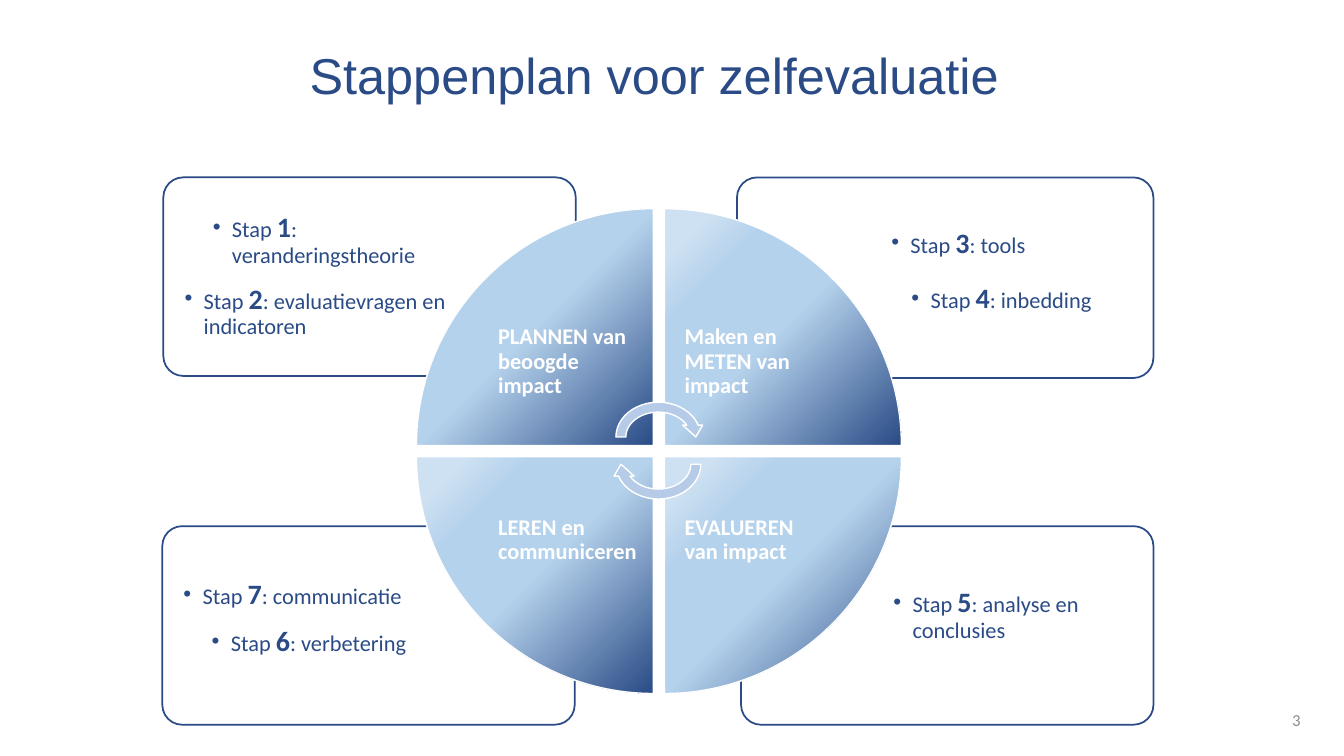
from lxml import etree
from pptx import Presentation
from pptx.dml.color import RGBColor
from pptx.enum.shapes import MSO_SHAPE
from pptx.enum.text import MSO_ANCHOR, MSO_AUTO_SIZE, PP_ALIGN
from pptx.oxml import parse_xml
from pptx.oxml.ns import nsdecls, qn
from pptx.util import Emu, Pt

ROUNDED, WEDGE, CYCLE_ARROW = (
    MSO_SHAPE.ROUNDED_RECTANGLE, MSO_SHAPE.PIE_WEDGE, MSO_SHAPE.CIRCULAR_ARROW)
TOP, MIDDLE = MSO_ANCHOR.TOP, MSO_ANCHOR.MIDDLE
LEFT, CENTER, RIGHT = PP_ALIGN.LEFT, PP_ALIGN.CENTER, PP_ALIGN.RIGHT
NO_FIT = MSO_AUTO_SIZE.NONE

EMU_PER_PX = 9144  # 100 px to the inch
COMPARISON_LAYOUT = 4  # a title and four text placeholders

COLORS = {
    "navy": "2A4B86",
    "sky": "B5D2EC",
    "pale": "CEE1F2",
    "arrow": "B5CBE7",
    "white": "FFFFFF",
    "gray": "8C8C8C",
}
WEDGE_STOPS = [(0, "navy"), (50, "sky"), (75, "sky"), (90, "pale")]

# Wheel: four quarters of equal size around a narrow cross
WHEEL_LEFT, WHEEL_TOP = 413, 207
QUARTER, PITCH, LABEL = 235, 246, 166
LABEL_INSETS = [(12, 12, 12, 12), (20, 12, 0, 12)]  # left, right column

# Column, row, rotation and label, clockwise from top left
QUARTERS = [
    (0, 0, 0, "PLANNEN van beoogde impact"),
    (1, 0, 90, "Maken en METEN van impact"),
    (1, 1, 180, "EVALUEREN van impact"),
    (0, 1, 270, "LEREN en communiceren"),
]

# Frame, opacity, list area, insets, space after a step, steps (indent, number, text)
STEP_BOXES = [
    ((735, 522, 409, 197), 86, (862, 576, 278, 139), (4, 8, 4, 12), 0,
     [(39, "5", "analyse en conclusies")]),
    ((161, 522, 409, 197), 90, (166, 576, 278, 139), (4, 0, 4, 12), 12,
     [(31, "7", "communicatie"), (59, "6", "verbetering")]),
    ((731, 176, 413, 199), 90, (860, 180, 280, 140), (4, 47, 4, 12), 18,
     [(39, "3", "tools"), (59, "4", "inbedding")]),
    ((162, 176, 409, 197), 91, (167, 181, 278, 139), (4, 31, 0, 12), 12,
     [(59, "1", "veranderingstheorie"),
      (31, "2", "evaluatievragen en indicatoren")]),
]


def px(length):
    return Emu(length * EMU_PER_PX)


def rgb(name):
    return RGBColor.from_string(COLORS[name])


def place(shape, area):
    shape.left, shape.top, shape.width, shape.height = map(px, area)


def set_frame(shape, insets, anchor):
    frame = shape.text_frame
    frame.word_wrap = True
    frame.auto_size = NO_FIT
    frame.vertical_anchor = anchor
    (frame.margin_left, frame.margin_top,
     frame.margin_right, frame.margin_bottom) = map(px, insets)
    return frame


def add_span(para, text, size, color, bold=False, font="Calibri"):
    span = para.add_run()
    span.text = text
    span.font.name = font
    span.font.size = Pt(size)
    span.font.bold = bold
    span.font.color.rgb = rgb(color)


def add_shape(page, kind, area, line, width, rotation=0):
    shape = page.shapes.add_shape(kind, *map(px, area))
    shape.shadow.inherit = False
    shape.rotation = rotation
    shape.line.color.rgb = rgb(line)
    shape.line.width = Pt(width)
    return shape


def fill_solid(shape, color, opacity=100):
    shape.fill.solid()
    shape.fill.fore_color.rgb = rgb(color)
    if opacity < 100:
        tone = shape.element.spPr.find(qn("a:solidFill"))[0]
        etree.SubElement(tone, qn("a:alpha")).set("val", str(opacity * 1000))


def fill_radial(shape):
    stops = "".join(
        f'<a:gs pos="{position * 1000}"><a:srgbClr val="{COLORS[name]}"/></a:gs>'
        for position, name in WEDGE_STOPS)
    gradient = parse_xml(
        f'<a:gradFill {nsdecls("a")} rotWithShape="0"><a:gsLst>{stops}</a:gsLst>'
        '<a:path path="circle"><a:fillToRect l="100000" t="100000"/></a:path>'
        '</a:gradFill>')
    shape.element.spPr.find(qn("a:prstGeom")).addnext(gradient)


def add_text(page, text, area, insets, size, color, bold=False, align=LEFT):
    box = page.shapes.add_textbox(*map(px, area))
    para = set_frame(box, insets, MIDDLE).paragraphs[0]
    para.alignment = align
    para.line_spacing = 0.9
    add_span(para, text, size, color, bold)


def set_bullet(para, indent):
    properties = para._p.get_or_add_pPr()
    properties.set("marL", str(px(indent)))
    properties.set("indent", str(px(-19)))
    etree.SubElement(properties, qn("a:buFont")).set("typeface", "Arial")
    etree.SubElement(properties, qn("a:buChar")).set("char", "•")


def add_step_box(page, body, frame_area, opacity, list_area, insets, gap, steps):
    box = add_shape(page, ROUNDED, frame_area, "navy", 1.25)
    box.adjustments[0] = 0.1
    fill_solid(box, "white", opacity)

    # The list lies directly above its frame
    box.element.addnext(body.element)
    place(body, list_area)
    frame = set_frame(body, insets, TOP)
    for index, (indent, number, text) in enumerate(steps):
        para = frame.add_paragraph() if index else frame.paragraphs[0]
        para.alignment = LEFT
        para.line_spacing = 0.9
        para.space_before = Pt(0)
        para.space_after = Pt(gap if index < len(steps) - 1 else 0)
        set_bullet(para, indent)
        add_span(para, "Stap ", 16, "navy")
        add_span(para, number, 20, "navy", bold=True)
        add_span(para, ": " + text, 16, "navy")


def add_quarter(page, column, row, rotation, label):
    left, top = WHEEL_LEFT + column * PITCH, WHEEL_TOP + row * PITCH
    wedge = add_shape(page, WEDGE, (left, top, QUARTER, QUARTER), "white", 1, rotation)
    fill_radial(wedge)

    # The label sits in the corner nearest the centre
    inward = QUARTER - LABEL
    area = (left + (1 - column) * inward, top + (1 - row) * inward, LABEL, LABEL)
    add_text(page, label, area, LABEL_INSETS[column], 16, "white", bold=True)


def main():
    deck = Presentation()
    deck.slide_width, deck.slide_height = px(1333), px(750)
    page = deck.slides.add_slide(deck.slide_layouts[COMPARISON_LAYOUT])
    title, *bodies = page.placeholders

    # Title and page number
    place(title, (98, 39, 1102, 71))
    heading = set_frame(title, (10, 5, 10, 5), TOP).paragraphs[0]
    heading.alignment = CENTER
    add_span(heading, "Stappenplan voor zelfevaluatie", 36, "navy", font="Arial")
    add_text(page, "3", (1000, 695, 300, 40), (10, 5, 10, 5), 12, "gray", align=RIGHT)

    # Steps in the corners
    for body, step_box in zip(bodies, STEP_BOXES):
        add_step_box(page, body, *step_box)

    # Wheel and its turning arrows
    for quarter in QUARTERS:
        add_quarter(page, *quarter)
    for top, rotation in [(394, 0), (421, 180)]:
        arrow = add_shape(page, CYCLE_ARROW, (606, top, 94, 79), "white", 1, rotation)
        fill_solid(arrow, "arrow")

    deck.save("out.pptx")


if __name__ == "__main__":
    main()
